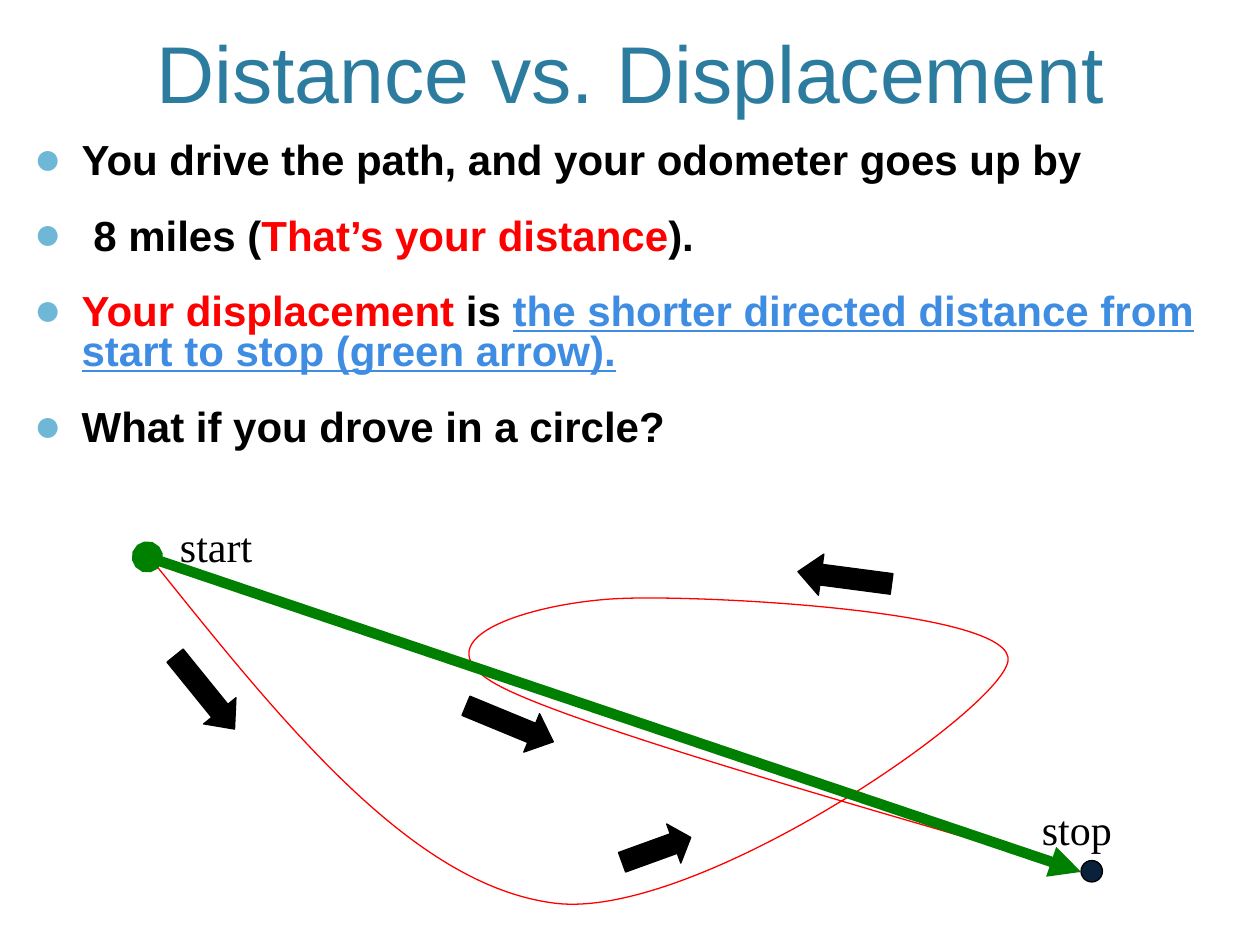
from dataclasses import dataclass

from lxml.etree import SubElement
from pptx import Presentation
from pptx.dml.color import RGBColor
from pptx.enum.shapes import MSO_CONNECTOR, MSO_SHAPE
from pptx.enum.text import MSO_ANCHOR, PP_ALIGN
from pptx.oxml.ns import qn
from pptx.util import Inches, Pt


@dataclass(frozen=True)
class Theme:
    title: str = "2C7C9F"
    ink: str = "000000"
    accent: str = "FF0000"
    definition: str = "3F8DE2"
    bullet: str = "6FB7D7"
    point: str = "09213B"
    displacement: str = "008000"
    heading_font: str = "Arial"
    label_font: str = "Times New Roman"
    title_size: int = 46
    text_size: int = 24
    thin: float = 0.75
    thick: float = 6


THEME = Theme()

STATEMENTS = [
    [("You drive the path, and your odometer goes up by", THEME.ink)],
    [(" 8 miles (", THEME.ink), ("That’s your distance", THEME.accent), (").", THEME.ink)],
    [("Your displacement ", THEME.accent), ("is ", THEME.ink),
     ("the shorter directed distance from start to stop (green arrow).", THEME.definition)],
    [("What if you drove in a circle?", THEME.ink)],
]

ROUTE_START = (0.25, 0.5)
ROUTE_CURVES = [
    [(1.27, 1.77), (2.29, 3.04), (3.42, 3.17)],
    [(4.54, 3.29), (6.92, 1.65), (7, 1.25)],
    [(7.08, 0.85), (4.6, 0.72), (3.92, 0.75)],
    [(3.24, 0.78), (2.31, 1.06), (2.92, 1.42)],
    [(3.53, 1.78), (6.81, 2.67), (7.58, 2.92)],
]
DIRECTION_ARROWS = [
    (0.25, 1.33, 0.75, 51),
    (5.33, 0.42, 0.75, 187.5),
    (3.92, 2.58, 0.58, 340.1),
    (2.67, 1.58, 0.75, 22.4),
]
ENDPOINTS = [(0.08, 0.33), (7.58, 2.83)]
LABELS = [("start", 0.33, 0.08, 1.58), ("stop", 7.17, 2.33, 1)]


def add_text_frame(slide, left, top, width, height):
    frame = slide.shapes.add_textbox(
        Inches(left), Inches(top), Inches(width), Inches(height)).text_frame
    frame.word_wrap = True
    return frame


def add_run(paragraph, text, font, size, color, bold=False):
    run = paragraph.add_run()
    run.text = text
    run.font.name = font
    run.font.size = Pt(size)
    run.font.bold = bold
    run.font.color.rgb = RGBColor.from_string(color)
    return run


def set_line(line, color, width):
    line.color.rgb = RGBColor.from_string(color)
    line.width = Pt(width)


def add_solid(slide, kind, left, top, width, height, color):
    solid = slide.shapes.add_shape(
        kind, Inches(left), Inches(top), Inches(width), Inches(height))
    solid.shadow.inherit = False
    solid.fill.solid()
    solid.fill.fore_color.rgb = RGBColor.from_string(color)
    set_line(solid.line, THEME.ink, THEME.thin)
    return solid


def set_bullet(paragraph):
    properties = paragraph._p.get_or_add_pPr()
    properties.set("marL", str(Inches(0.38)))
    properties.set("indent", str(-Inches(0.38)))
    bullet_color = SubElement(properties, qn("a:buClr"))
    SubElement(bullet_color, qn("a:srgbClr"), val=THEME.bullet)
    SubElement(properties, qn("a:buSzPct"), val="110000")
    SubElement(properties, qn("a:buFont"), typeface=THEME.heading_font)
    SubElement(properties, qn("a:buChar"), char="●")


def add_title(slide, left, top, width, height):
    frame = add_text_frame(slide, left, top, width, height)
    frame.vertical_anchor = MSO_ANCHOR.BOTTOM
    heading = frame.paragraphs[0]
    heading.alignment = PP_ALIGN.CENTER
    add_run(heading, "Distance vs. Displacement",
            THEME.heading_font, THEME.title_size, THEME.title)


def add_statements(slide, left, top, width, height):
    frame = add_text_frame(slide, left, top, width, height)
    for index, parts in enumerate(STATEMENTS):
        statement = frame.add_paragraph() if index else frame.paragraphs[0]
        statement.line_spacing = 0.8
        statement.space_before = Pt(20)
        set_bullet(statement)
        for text, color in parts:
            run = add_run(statement, text, THEME.heading_font, THEME.text_size, color, True)
            if color == THEME.definition:
                run.font.underline = True


def bend_segments(freeform):
    outline = next(freeform._element.iter(qn("a:path")))
    segments = outline.findall(qn("a:lnTo"))
    for first in range(0, len(segments), 3):
        curve = SubElement(outline, qn("a:cubicBezTo"))
        for segment in segments[first:first + 3]:
            curve.append(segment[0])
            outline.remove(segment)


def add_route(slide, left, top):
    builder = slide.shapes.build_freeform(
        Inches(left + ROUTE_START[0]), Inches(top + ROUTE_START[1]))
    builder.add_line_segments(
        [(Inches(left + x), Inches(top + y)) for curve in ROUTE_CURVES for x, y in curve],
        close=False)
    route = builder.convert_to_shape()
    bend_segments(route)
    route.shadow.inherit = False
    route.fill.background()
    set_line(route.line, THEME.accent, THEME.thin)


def add_displacement(slide, left, top):
    (start_x, start_y), (stop_x, stop_y) = ENDPOINTS
    arrow = slide.shapes.add_connector(
        MSO_CONNECTOR.STRAIGHT,
        Inches(left + start_x + 0.09), Inches(top + start_y + 0.09),
        Inches(left + stop_x), Inches(top + stop_y + 0.09))
    set_line(arrow.line, THEME.displacement, THEME.thick)
    outline = arrow.line._get_or_add_ln()
    SubElement(outline, qn("a:headEnd"), type="oval")
    SubElement(outline, qn("a:tailEnd"), type="triangle")
    SubElement(arrow._element.spPr, qn("a:effectLst"))


def add_journey(slide, left, top):
    for x, y, length, angle in DIRECTION_ARROWS:
        arrow = add_solid(slide, MSO_SHAPE.RIGHT_ARROW,
                          left + x, top + y, length, 0.33, THEME.ink)
        arrow.adjustments[0] = 0.5
        arrow.adjustments[1] = 0.75 * length
        arrow.rotation = angle
    for x, y in ENDPOINTS:
        add_solid(slide, MSO_SHAPE.OVAL, left + x, top + y, 0.17, 0.17, THEME.point)
    for text, x, y, width in LABELS:
        frame = add_text_frame(slide, left + x, top + y, width, 0.5)
        add_run(frame.paragraphs[0], text, THEME.label_font, THEME.text_size, THEME.ink)
    add_route(slide, left, top)
    add_displacement(slide, left, top)


def main():
    presentation = Presentation()
    presentation.slide_width = Inches(10)
    presentation.slide_height = Inches(7.5)
    slide = presentation.slides.add_slide(presentation.slide_layouts[6])
    add_title(slide, 0.75, 0.17, 8.5, 0.83)
    add_statements(slide, 0.17, 1.09, 9.67, 2.5)
    add_journey(slide, 1, 4)
    presentation.save("out.pptx")


if __name__ == "__main__":
    main()
